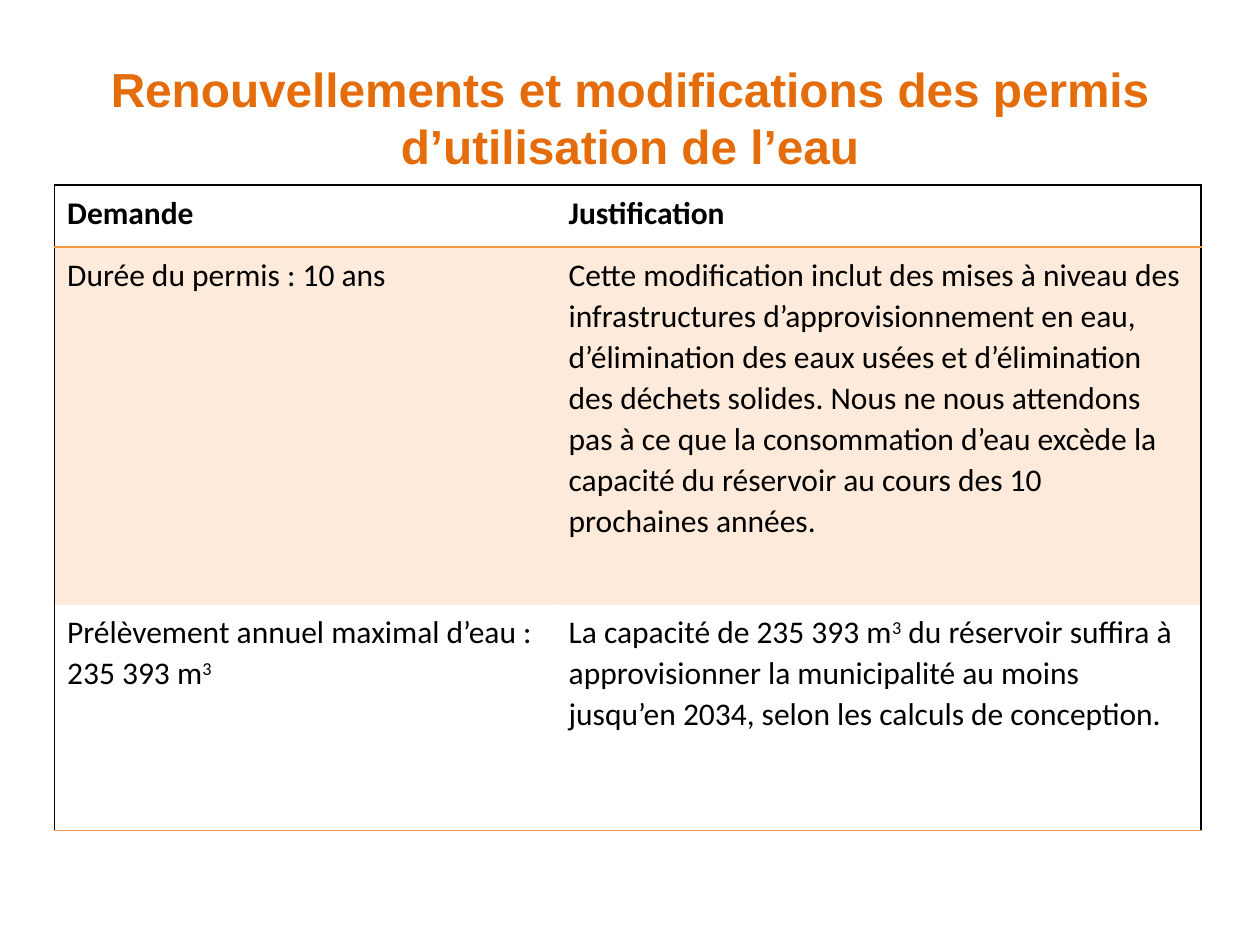
from lxml import etree
from pptx import Presentation
from pptx.dml.color import RGBColor
from pptx.enum.text import MSO_ANCHOR, MSO_AUTO_SIZE, PP_ALIGN
from pptx.oxml.ns import qn
from pptx.util import Cm, Pt

TITLE_ORANGE = RGBColor(0xE4, 0x6C, 0x0A)
ORANGE = RGBColor(0xF7, 0x96, 0x46)
BLACK = RGBColor(0, 0, 0)
NO_GRID_STYLE = "{2D5ABB26-0587-4C30-8999-92F81FD0307C}"

COL_WIDTHS = [10.11, 13]
ROW_HEIGHTS = [1.25, 7.21, 4.55]
ROWS = [
    ("Demande", "Justification"),
    (
        "Durée du permis : 10 ans",
        "Cette modification inclut des mises à niveau des infrastructures "
        "d’approvisionnement en eau, d’élimination des eaux usées et "
        "d’élimination des déchets solides. Nous ne nous attendons pas à ce "
        "que la consommation d’eau excède la capacité du réservoir au cours "
        "des 10 prochaines années.",
    ),
    (
        "Prélèvement annuel maximal d’eau : 235 393 m^3",
        "La capacité de 235 393 m^3^ du réservoir suffira à approvisionner la "
        "municipalité au moins jusqu’en 2034, selon les calculs de conception.",
    ),
]


def add_title(s, left, top, width, height):
    sp = s.shapes.title
    sp.left, sp.top, sp.width, sp.height = left, top, width, height
    tf = sp.text_frame
    tf.text = "Renouvellements et modifications des permis d’utilisation de l’eau"
    tf.word_wrap = True
    tf.auto_size = MSO_AUTO_SIZE.NONE
    tf.vertical_anchor = MSO_ANCHOR.MIDDLE
    p = tf.paragraphs[0]
    p.alignment = PP_ALIGN.CENTER
    font = p.runs[0].font
    font.name, font.size, font.bold = "Arial", Pt(27.3), True
    font.color.rgb = TITLE_ORANGE


def set_border(cell, side, color):
    tcPr = cell._tc.get_or_add_tcPr()
    ln = etree.SubElement(tcPr, qn(f"a:ln{side}"), w=str(Pt(1)))
    fill = etree.SubElement(ln, qn("a:solidFill"))
    etree.SubElement(fill, qn("a:srgbClr"), val=str(color))


def set_tint(cell, color, percent):
    cell.fill.solid()
    cell.fill.fore_color.rgb = color
    clr = cell._tc.tcPr.find(qn("a:solidFill")).find(qn("a:srgbClr"))
    etree.SubElement(clr, qn("a:alpha"), val=str(percent * 1000))


def write_cell(cell, text, bold):
    p = cell.text_frame.paragraphs[0]
    p.line_spacing = 1.07
    p.space_after = Pt(8)
    for i, part in enumerate(text.split("^")):
        r = p.add_run()
        r.text = part
        r.font.name, r.font.size, r.font.bold = "Calibri", Pt(18), bold
        r.font.color.rgb = BLACK
        if i % 2:
            r.font._element.set("baseline", "30000")


def add_permit_table(s, left, top, width, height):
    last_row, last_col = len(ROWS) - 1, len(COL_WIDTHS) - 1
    frame = s.shapes.add_table(len(ROWS), len(COL_WIDTHS), left, top, width, height)
    table = frame.table
    table._tbl.tblPr.find(qn("a:tableStyleId")).text = NO_GRID_STYLE
    table.horz_banding = False
    for col, col_width in zip(table.columns, COL_WIDTHS):
        col.width = Cm(col_width)
    for row, row_height in zip(table.rows, ROW_HEIGHTS):
        row.height = Cm(row_height)

    for i, texts in enumerate(ROWS):
        for j, text in enumerate(texts):
            cell = table.cell(i, j)
            write_cell(cell, text, bold=i == 0)
            if j == 0:
                set_border(cell, "L", BLACK)
            if j == last_col:
                set_border(cell, "R", BLACK)
            if i == 0:
                set_border(cell, "T", BLACK)
            if i in (0, last_row):
                set_border(cell, "B", ORANGE)
            if i == 1:
                set_tint(cell, ORANGE, 20)
            else:
                cell.fill.background()


def main():
    prs = Presentation()
    prs.slide_width, prs.slide_height = Cm(25.4), Cm(19.05)
    s = prs.slides.add_slide(prs.slide_layouts[5])
    add_title(s, 0, Cm(0.76), prs.slide_width, Cm(3.18))
    add_permit_table(s, Cm(1.1), Cm(3.73), Cm(sum(COL_WIDTHS)), Cm(sum(ROW_HEIGHTS)))
    prs.save("out.pptx")


if __name__ == "__main__":
    main()
